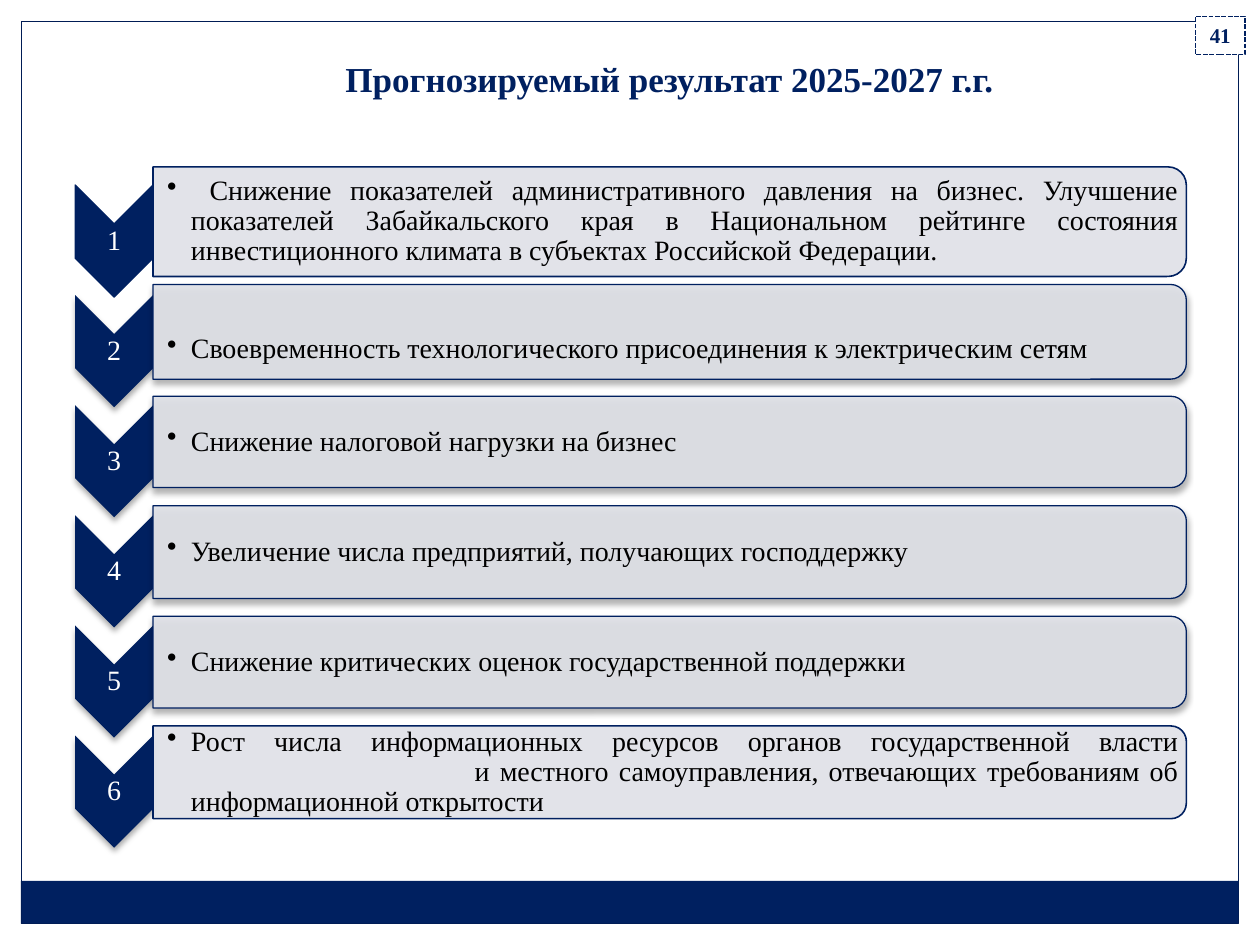
from dataclasses import dataclass
from typing import Optional

from lxml import etree
from pptx import Presentation
from pptx.dml.color import RGBColor
from pptx.enum.dml import MSO_LINE
from pptx.enum.shapes import MSO_SHAPE
from pptx.enum.text import MSO_ANCHOR, PP_ALIGN
from pptx.oxml.ns import qn
from pptx.util import Cm, Pt

RECT = MSO_SHAPE.RECTANGLE
CHEVRON = MSO_SHAPE.CHEVRON
BAR = MSO_SHAPE.ROUND_2_SAME_RECTANGLE
SYS_DASH = MSO_LINE.SQUARE_DOT
MIDDLE, BOTTOM = MSO_ANCHOR.MIDDLE, MSO_ANCHOR.BOTTOM
LEFT, CENTER, JUSTIFY = PP_ALIGN.LEFT, PP_ALIGN.CENTER, PP_ALIGN.JUSTIFY


@dataclass(frozen=True)
class Theme:
    font: str = "Times New Roman"
    navy: str = "002060"
    frame: str = "001C55"
    bar: str = "DFE1E7"
    white: str = "FFFFFF"
    black: str = "000000"
    title: int = 20
    body: int = 16
    badge: int = 12
    bar_alpha: int = 90
    shadow_alpha: int = 32


@dataclass(frozen=True)
class Box:
    x: float
    y: float
    w: float
    h: float


@dataclass(frozen=True)
class Result:
    text: str
    height: float
    align: PP_ALIGN = LEFT
    bar_shadow: bool = True
    chevron_shadow: bool = True
    top_inset: float = 0.03
    tab: Optional[float] = None


THEME = Theme()
FIRST_Y, PITCH = 4.47, 2.22
CHEVRON_X, CHEVRON_DROP = 2.3, 0.39
CHEVRON_W, CHEVRON_H = 1.57, 2.26
BAR_X, BAR_W = 13.5, 20.83
TEXT_X, TEXT_W = 3.07, 20.72
INDENT = 0.48

RESULTS = [
    Result(" Снижение показателей административного давления на бизнес. "
           "Улучшение показателей Забайкальского края в Национальном рейтинге "
           "состояния инвестиционного климата в субъектах Российской Федерации.",
           2.21, JUSTIFY, bar_shadow=False, chevron_shadow=False),
    Result("Своевременность технологического присоединения к электрическим сетям",
           1.91, top_inset=0.76),
    Result("Снижение налоговой нагрузки на бизнес", 1.84),
    Result("Увеличение числа предприятий, получающих господдержку", 1.87),
    Result("Снижение критических оценок государственной поддержки", 1.85),
    Result("Рост числа информационных ресурсов органов государственной власти"
           "\v\tи местного самоуправления, отвечающих требованиям об "
           "информационной открытости",
           1.87, JUSTIFY, bar_shadow=False, tab=6.2),
]


def rgb(color: str) -> RGBColor:
    return RGBColor.from_string(color)


def centered(x: float, y: float, w: float, h: float) -> Box:
    return Box(x - w / 2, y - h / 2, w, h)


def lengths(box: Box) -> tuple:
    return Cm(box.x), Cm(box.y), Cm(box.w), Cm(box.h)


def add_alpha(color, percent: int) -> None:
    etree.SubElement(color, qn("a:alpha"), val=str(percent * 1000))


def add_shadow(sp) -> None:
    effects = sp._element.spPr.find(qn("a:effectLst"))
    shadow = etree.SubElement(effects, qn("a:outerShdw"), blurRad=str(Pt(3.5)),
                              dist=str(Pt(2.2)), dir="5400000", rotWithShape="0")
    add_alpha(etree.SubElement(shadow, qn("a:srgbClr"), val=THEME.black),
              THEME.shadow_alpha)


def add_shape(s, kind, box: Box, fill: Optional[str], line: Optional[str],
              width: float = 0.75, rotation: int = 0, shadow: bool = False):
    sp = s.shapes.add_shape(kind, *lengths(box))
    sp.rotation = rotation
    sp.shadow.inherit = False
    if fill:
        sp.fill.solid()
        sp.fill.fore_color.rgb = rgb(fill)
    else:
        sp.fill.background()
    if line:
        sp.line.color.rgb = rgb(line)
        sp.line.width = Pt(width)
    else:
        sp.line.fill.background()
    if shadow:
        add_shadow(sp)
    return sp


def write(tf, text: str, size: int, color: str, align: PP_ALIGN,
          bold: bool = False, anchor: MSO_ANCHOR = MIDDLE):
    tf.word_wrap = True
    tf.vertical_anchor = anchor
    p = tf.paragraphs[0]
    p.text = text
    p.alignment = align
    p.font.name = THEME.font
    p.font.size = Pt(size)
    p.font.bold = bold
    p.font.color.rgb = rgb(color)
    return p


def add_text(s, box: Box, text: str, color: str, align: PP_ALIGN,
             left: float = 0.03, top: float = 0.03):
    tf = s.shapes.add_textbox(*lengths(box)).text_frame
    tf.margin_left, tf.margin_top = Cm(left), Cm(top)
    tf.margin_right = tf.margin_bottom = Cm(0.03)
    p = write(tf, text, THEME.body, color, align)
    p.line_spacing = 0.9
    return p


def add_bullet(p, tab: Optional[float]) -> None:
    pPr = p._p.get_or_add_pPr()
    pPr.set("marL", str(Cm(INDENT)))
    pPr.set("indent", str(-Cm(INDENT)))
    bullet = etree.Element(qn("a:buChar"), char="•")
    pPr.find(qn("a:lnSpc")).addnext(bullet)
    if tab is not None:
        tabs = etree.Element(qn("a:tabLst"))
        etree.SubElement(tabs, qn("a:tab"), pos=str(Cm(tab)), algn="l")
        bullet.addnext(tabs)


def add_result(s, index: int, item: Result) -> None:
    y = FIRST_Y + index * PITCH
    chevron_y = y + CHEVRON_DROP
    add_shape(s, CHEVRON, centered(CHEVRON_X, chevron_y, CHEVRON_H, CHEVRON_W),
              THEME.navy, None if item.chevron_shadow else THEME.navy,
              rotation=90, shadow=item.chevron_shadow)
    add_text(s, centered(CHEVRON_X, chevron_y, CHEVRON_W, 0.69),
             str(index + 1), THEME.white, CENTER)
    bar = add_shape(s, BAR, centered(BAR_X, y, item.height, BAR_W),
                    THEME.bar, THEME.navy, 0.75 if item.bar_shadow else 0.9,
                    rotation=90, shadow=item.bar_shadow)
    add_alpha(bar._element.spPr.find(qn("a:solidFill"))[0], THEME.bar_alpha)
    height = item.height - 0.18
    p = add_text(s, Box(TEXT_X, y - height / 2, TEXT_W, height), item.text,
                 THEME.black, item.align, left=0.3, top=item.top_inset)
    add_bullet(p, item.tab)


def add_title(s, box: Box, text: str) -> None:
    title = s.shapes.title
    title.left, title.top, title.width, title.height = lengths(box)
    write(title.text_frame, text, THEME.title, THEME.navy, LEFT, True, BOTTOM)


def main() -> None:
    prs = Presentation()
    prs.slide_width, prs.slide_height = Cm(25.4), Cm(19.05)
    s = prs.slides.add_slide(prs.slide_layouts[5])
    add_shape(s, RECT, Box(0.42, 17.76, 24.54, 0.86), THEME.navy, None)
    add_shape(s, RECT, Box(0.43, 0.43, 24.54, 18.19), None, THEME.frame)
    for index, item in enumerate(RESULTS):
        add_result(s, index, item)
    add_title(s, Box(6.71, 1.12, 14.81, 1.02),
              "Прогнозируемый результат 2025-2027 г.г.")
    badge = add_shape(s, RECT, Box(24.1, 0.33, 1, 0.77),
                      THEME.white, THEME.navy, 0.9)
    badge.line.dash_style = SYS_DASH
    write(badge.text_frame, "41", THEME.badge, THEME.navy, CENTER, True)
    prs.save("out.pptx")


if __name__ == "__main__":
    main()
